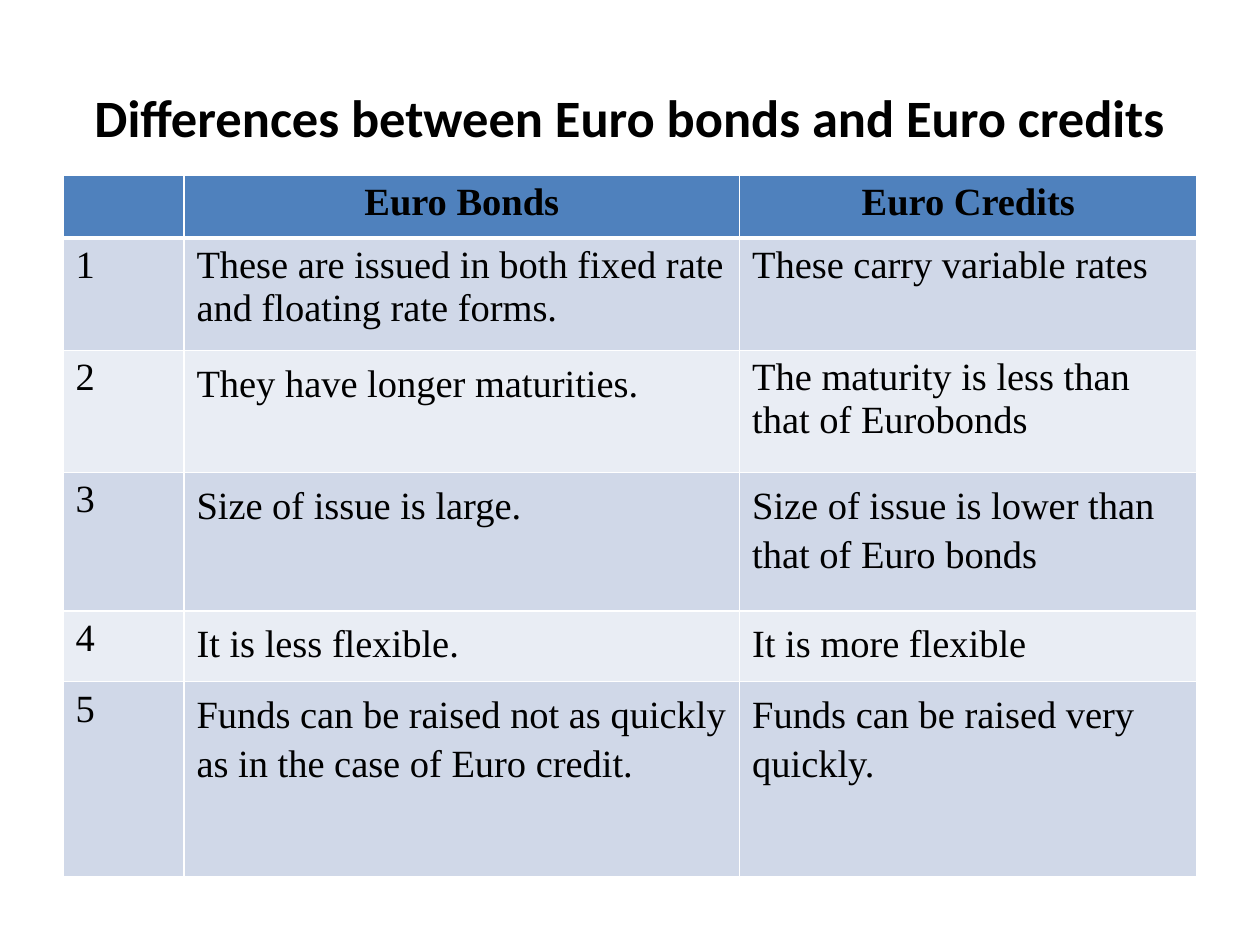
import pptx
import pptx.dml.color
import pptx.enum.text
import pptx.oxml
import pptx.oxml.ns
import pptx.util
from pptx.util import Inches

RGBColor = pptx.dml.color.RGBColor
ALIGN = pptx.enum.text.PP_ALIGN
ANCHOR = pptx.enum.text.MSO_ANCHOR

BLACK = RGBColor(0x00, 0x00, 0x00)
WHITE = RGBColor(0xFF, 0xFF, 0xFF)
HEADER_BLUE = RGBColor(0x4F, 0x81, 0xBD)
BAND_COLORS = (RGBColor(0xD0, 0xD8, 0xE8), RGBColor(0xE9, 0xED, 0xF4))

COLUMN_WIDTHS = (0.96, 4.41, 3.63)
ROW_HEIGHTS = (0.5, 0.89, 0.97, 1.1, 0.56, 1.55)
HEADINGS = ("", "Euro Bonds", "Euro Credits")
DIFFERENCES = (
    ("These are issued in both fixed rate and floating rate forms.",
     "These carry variable rates"),
    ("They have longer maturities.",
     "The maturity is less than that of Eurobonds"),
    ("Size of issue is large.",
     "Size of issue is lower than that of Euro bonds"),
    ("It is less flexible.", "It is more flexible"),
    ("Funds can be raised not as quickly as in the case of Euro credit.",
     "Funds can be raised very quickly."),
)
# Body cells (row, column) set with tight lines
TIGHT_CELLS = {(1, 1), (1, 2), (2, 2)}


def write_text(text_frame, text, size=22, font="Times New Roman", bold=False,
               align=ALIGN.LEFT, spaced=False):
    paragraph = text_frame.paragraphs[0]
    paragraph.alignment = align
    if spaced:
        paragraph.line_spacing = 1.15
        paragraph.space_before = pptx.util.Pt(4.4)
        paragraph.space_after = pptx.util.Pt(10)
    run = paragraph.add_run()
    run.text = text
    run.font.size = pptx.util.Pt(size)
    run.font.name = font
    run.font.bold = bold
    run.font.color.rgb = BLACK


def format_cell(cell, fill_color, top=1, bottom=1):
    # Borders come before the fill in the cell properties
    properties = cell._tc.get_or_add_tcPr()
    for side, width in (("L", 1), ("R", 1), ("T", top), ("B", bottom)):
        properties.append(pptx.oxml.parse_xml(
            f'<a:ln{side} {pptx.oxml.ns.nsdecls("a")} w="{pptx.util.Pt(width)}">'
            f'<a:solidFill><a:srgbClr val="{WHITE}"/></a:solidFill></a:ln{side}>'))
    cell.fill.solid()
    cell.fill.fore_color.rgb = fill_color


def add_title(slide, left, top, width, height):
    title = slide.shapes.title
    title.left, title.top, title.width, title.height = left, top, width, height
    title.text_frame.word_wrap = True
    title.text_frame.vertical_anchor = ANCHOR.MIDDLE
    write_text(title.text_frame, "Differences between Euro bonds and Euro credits",
               size=30, font="Calibri", bold=True, align=ALIGN.CENTER)


def add_comparison_table(slide, left, top, width, height):
    table = slide.shapes.add_table(
        len(ROW_HEIGHTS), len(COLUMN_WIDTHS), left, top, width, height).table
    for column, column_width in zip(table.columns, COLUMN_WIDTHS):
        column.width = Inches(column_width)
    for row, row_height in zip(table.rows, ROW_HEIGHTS):
        row.height = Inches(row_height)

    # Header row
    for column_index, heading in enumerate(HEADINGS):
        cell = table.cell(0, column_index)
        format_cell(cell, HEADER_BLUE, bottom=3)
        if heading:
            write_text(cell.text_frame, heading, bold=True, align=ALIGN.CENTER)

    # Numbered, banded rows
    for row_index, difference in enumerate(DIFFERENCES, start=1):
        for column_index, text in enumerate((str(row_index), *difference)):
            cell = table.cell(row_index, column_index)
            format_cell(cell, BAND_COLORS[(row_index - 1) % 2],
                        top=3 if row_index == 1 else 1)
            spaced = column_index > 0 and (row_index, column_index) not in TIGHT_CELLS
            write_text(cell.text_frame, text, spaced=spaced)


def main():
    presentation = pptx.Presentation()
    presentation.slide_width = Inches(10)
    presentation.slide_height = Inches(7.5)
    slide = presentation.slides.add_slide(presentation.slide_layouts[5])
    add_title(slide, Inches(0.5), Inches(0.3), Inches(9), Inches(1.25))
    add_comparison_table(slide, Inches(0.5), Inches(1.39), Inches(9), Inches(5.57))
    presentation.save("out.pptx")


if __name__ == "__main__":
    main()
